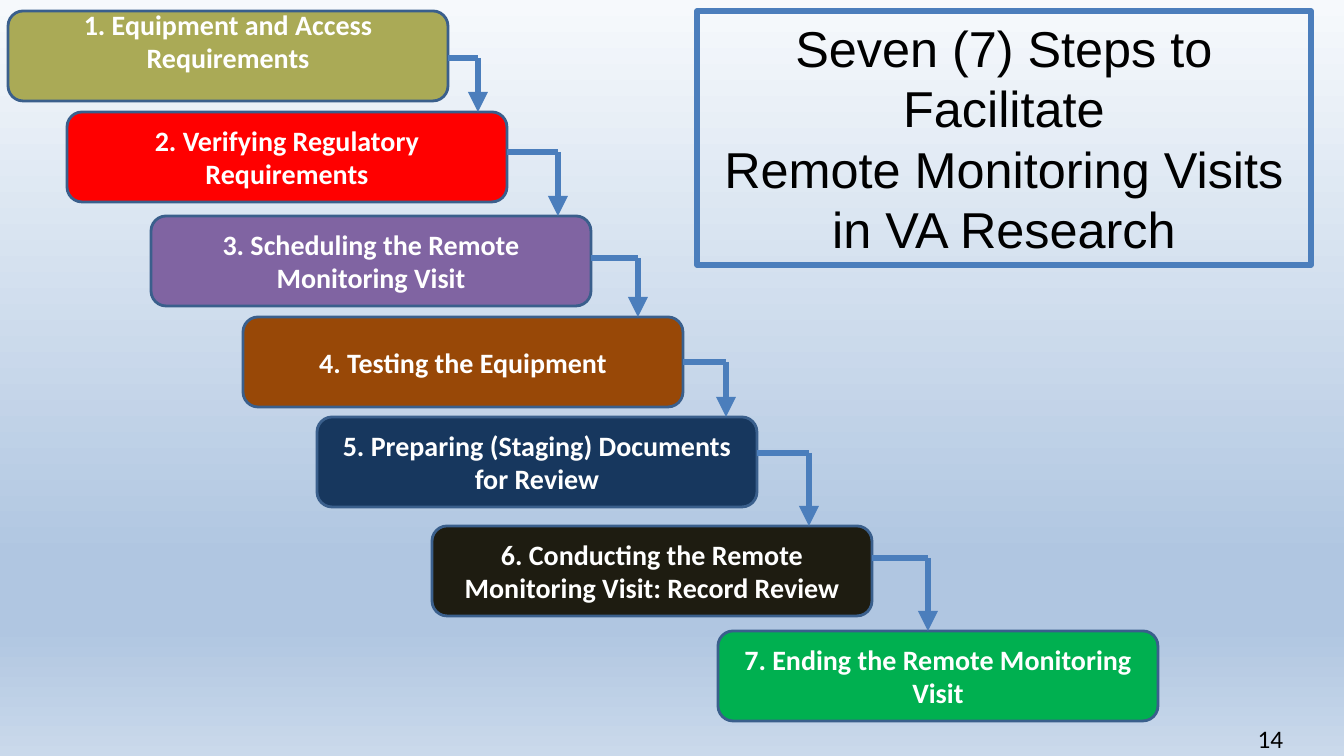
"""Build the slide showing seven steps of a remote monitoring visit."""
from dataclasses import dataclass
from itertools import pairwise

from lxml import etree
from pptx import Presentation
from pptx.dml.color import RGBColor
from pptx.enum.shapes import MSO_CONNECTOR, MSO_SHAPE
from pptx.enum.text import MSO_ANCHOR, MSO_AUTO_SIZE, PP_ALIGN
from pptx.oxml.ns import qn
from pptx.shapes.autoshape import Shape
from pptx.shapes.connector import Connector
from pptx.slide import Slide
from pptx.util import Emu, Pt

ROUNDED = MSO_SHAPE.ROUNDED_RECTANGLE
STRAIGHT = MSO_CONNECTOR.STRAIGHT
MIDDLE = MSO_ANCHOR.MIDDLE
NO_AUTOFIT = MSO_AUTO_SIZE.NONE
CENTER, RIGHT = PP_ALIGN.CENTER, PP_ALIGN.RIGHT
RIGHT_SIDE = 3
TITLE_ONLY = 5

EMU_PER_PX = 914400 / 100.8
STEP_WIDTH, STEP_HEIGHT = 440, 90
COLORS = {
    "olive": "AAAA56", "red": "FF0000", "purple": "8064A2", "brown": "984807",
    "navy": "17375E", "black": "1E1C11", "green": "00B050",
    "outline": "3A5F8C", "arrow": "4B7EBC", "white": "FFFFFF", "text": "000000",
}
BACKGROUND_STOPS = {0: "F6F9FC", 74: "B0C6E1", 83: "B0C6E1", 100: "CAD9EB"}


@dataclass(frozen=True)
class Step:
    """A step box with the corner of the arrow that leaves it."""

    text: str
    color: str
    left: int
    top: int
    corner_x: int = 0
    corner_y: int = 0
    bottom_inset: int = 5


STEPS = [
    Step("1. Equipment and Access Requirements", "olive", 8, 11, 478, 58, 35),
    Step("2. Verifying Regulatory Requirements", "red", 67, 112, 558, 152),
    Step("3. Scheduling the Remote Monitoring Visit", "purple", 151, 216, 638, 258),
    Step("4. Testing the Equipment", "brown", 243, 317, 726, 362),
    Step("5. Preparing (Staging) Documents for Review", "navy", 317, 417, 809, 453),
    Step("6. Conducting the Remote Monitoring Visit: Record Review", "black",
         432, 526, 928, 558),
    Step("7. Ending the Remote Monitoring Visit", "green", 718, 631),
]


def px(length: int) -> Emu:
    """Turn pixels into EMU."""
    return Emu(round(length * EMU_PER_PX))


def color(name: str) -> RGBColor:
    """Look up a named colour."""
    return RGBColor.from_string(COLORS[name])


def write(shape: Shape, lines: list[str], font: str, size: int, ink: str,
          alignment: PP_ALIGN, bold: bool = False) -> None:
    """Write one formatted paragraph for each line."""
    frame = shape.text_frame
    frame.word_wrap = True
    frame.text = "\n".join(lines)
    for paragraph in frame.paragraphs:
        paragraph.alignment = alignment
        paragraph.font.name = font
        paragraph.font.size = Pt(size)
        paragraph.font.bold = bold
        paragraph.font.color.rgb = color(ink)


def paint_background(slide: Slide) -> None:
    """Fill the slide with the vertical blue gradient."""
    fill = slide.background.fill
    fill.gradient()
    fill.gradient_angle = 270
    stops = slide.element.find(f".//{qn('a:gsLst')}")
    for stop in list(stops):
        stops.remove(stop)
    for percent, value in BACKGROUND_STOPS.items():
        stop = etree.SubElement(stops, qn("a:gs"), pos=str(percent * 1000))
        etree.SubElement(stop, qn("a:srgbClr"), val=value)


def add_title(slide: Slide) -> None:
    """Place the framed title."""
    title = slide.shapes.title
    title.left, title.top, title.width, title.height = map(px, (697, 11, 614, 254))
    title.line.color.rgb = color("arrow")
    title.line.width = Pt(4)
    write(title, ["Seven (7) Steps to Facilitate", "Remote Monitoring Visits in VA Research"],
          "Arial", 36, "text", CENTER)
    title.text_frame.auto_size = NO_AUTOFIT
    title.text_frame.vertical_anchor = MIDDLE


def add_step(slide: Slide, step: Step) -> Shape:
    """Draw a step box."""
    box = slide.shapes.add_shape(
        ROUNDED, px(step.left), px(step.top), px(STEP_WIDTH), px(STEP_HEIGHT))
    box.shadow.inherit = False
    box.fill.solid()
    box.fill.fore_color.rgb = color(step.color)
    box.line.color.rgb = color("outline")
    box.line.width = Pt(2)
    write(box, [step.text], "Calibri", 20, "white", CENTER, bold=True)
    box.text_frame.vertical_anchor = MIDDLE
    box.text_frame.margin_bottom = px(step.bottom_inset)
    return box


def add_line(slide: Slide, start: tuple[int, int], end: tuple[int, int],
             width: float) -> Connector:
    """Draw a straight line without a shadow."""
    line = slide.shapes.add_connector(STRAIGHT, *map(px, start + end))
    line.line.color.rgb = color("arrow")
    line.line.width = Pt(width)
    etree.SubElement(line.element.spPr, qn("a:effectLst"))
    return line


def add_arrow(slide: Slide, box: Shape, step: Step, following: Step) -> None:
    """Lead from the side of a step down to the following one."""
    corner = (step.corner_x, step.corner_y)
    shelf = add_line(slide, (step.left + STEP_WIDTH, step.corner_y), corner, 3.75)
    if step.corner_y == step.top + STEP_HEIGHT // 2:
        shelf.begin_connect(box, RIGHT_SIDE)
    drop = add_line(slide, corner, (step.corner_x, following.top), 4.75)
    etree.SubElement(drop.line._get_or_add_ln(), qn("a:tailEnd"), type="triangle")


def add_page_number(slide: Slide) -> None:
    """Write the page number at the lower right."""
    number = slide.shapes.add_textbox(*map(px, (980, 718, 313, 40)))
    write(number, ["14"], "Calibri", 18, "text", RIGHT)


def main() -> None:
    """Build and save the presentation."""
    presentation = Presentation()
    presentation.slide_width, presentation.slide_height = px(1344), px(756)
    slide = presentation.slides.add_slide(presentation.slide_layouts[TITLE_ONLY])
    paint_background(slide)
    add_title(slide)
    boxes = [add_step(slide, step) for step in STEPS]
    for box, (step, following) in zip(boxes, pairwise(STEPS)):
        add_arrow(slide, box, step, following)
    add_page_number(slide)
    presentation.save("out.pptx")


if __name__ == "__main__":
    main()
